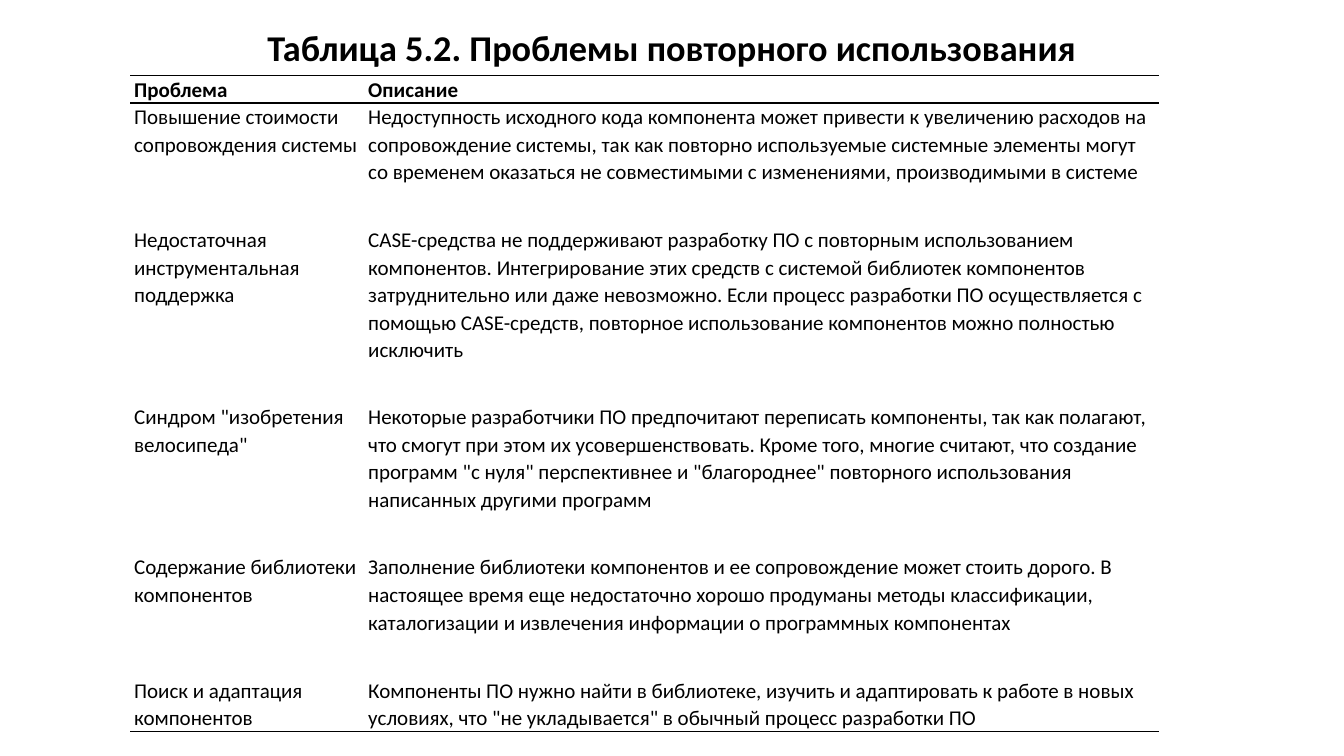
from lxml import etree
from pptx import Presentation
from pptx import util as u
from pptx.dml.color import RGBColor
from pptx.enum import text
from pptx.oxml import ns

TITLE = "Таблица 5.2. Проблемы повторного использования"
HEADINGS = ("Проблема", "Описание")
PROBLEMS = [
    ("Повышение стоимости сопровождения системы",
     "Недоступность исходного кода компонента может привести к увеличению расходов на "
     "сопровождение системы, так как повторно используемые системные элементы могут со "
     "временем оказаться не совместимыми с изменениями, производимыми в системе"),
    ("Недостаточная инструментальная поддержка",
     "CASE-средства не поддерживают разработку ПО с повторным использованием компонентов. "
     "Интегрирование этих средств с системой библиотек компонентов затруднительно или даже "
     "невозможно. Если процесс разработки ПО осуществляется с помощью CASE-средств, "
     "повторное использование компонентов можно полностью исключить"),
    ('Синдром "изобретения велосипеда"',
     "Некоторые разработчики ПО предпочитают переписать компоненты, так как полагают, что "
     "смогут при этом их усовершенствовать. Кроме того, многие считают, что создание "
     'программ "с нуля" перспективнее и "благороднее" повторного использования написанных '
     "другими программ"),
    ("Содержание библиотеки компонентов",
     "Заполнение библиотеки компонентов и ее сопровождение может стоить дорого. В настоящее "
     "время еще недостаточно хорошо продуманы методы классификации, каталогизации и "
     "извлечения информации о программных компонентах"),
    ("Поиск и адаптация компонентов",
     "Компоненты ПО нужно найти в библиотеке, изучить и адаптировать к работе в новых "
     'условиях, что "не укладывается" в обычный процесс разработки ПО'),
]

FONT, BLACK, WHITE = "Calibri", "000000", "FFFFFF"
LEFT, HEADER_TOP, HEADER_HEIGHT = 3.28, 1.9, 0.69
COLUMN_WIDTHS = (5.9, 20.03)
ROW_HEIGHTS = (3.1, 4.47, 3.78, 3.1, 1.37)
NO_STYLE_NO_GRID = "{2D5ABB26-0587-4C30-8999-92F81FD0307C}"


def color(value):
    return RGBColor.from_string(value)


def add_text(para, words, size, bold):
    span = para.add_run()
    span.text = words
    span.font.name, span.font.size, span.font.bold = FONT, u.Pt(size), bold
    span.font.color.rgb = color(BLACK)


def add_border(cell, side):
    """Draw a 1 pt black line on one side of a cell: lnT or lnB."""
    properties = cell._tc.get_or_add_tcPr()
    line = etree.SubElement(properties, ns.qn("a:" + side), w=str(u.Pt(1)))
    fill = etree.SubElement(line, ns.qn("a:solidFill"))
    etree.SubElement(fill, ns.qn("a:srgbClr"), val=BLACK)


def add_ruled_table(slide, top, rows, heights, bold=False):
    """Add a plain table with a line above its first row and below its last."""
    frame = slide.shapes.add_table(
        len(rows), len(COLUMN_WIDTHS), u.Cm(LEFT), u.Cm(top),
        u.Cm(sum(COLUMN_WIDTHS)), u.Cm(sum(heights)))
    table = frame.table
    table.first_row = table.horz_banding = False
    table._tbl.tblPr.find(ns.qn("a:tableStyleId")).text = NO_STYLE_NO_GRID
    for column, width in zip(table.columns, COLUMN_WIDTHS):
        column.width = u.Cm(width)
    for r, (row, height) in enumerate(zip(rows, heights)):
        table.rows[r].height = u.Cm(height)
        for c, words in enumerate(row):
            cell = table.cell(r, c)
            cell.margin_left = cell.margin_right = u.Cm(0.1)
            cell.margin_top = cell.margin_bottom = 0
            if r == 0:
                add_border(cell, "lnT")
            if r == len(rows) - 1:
                add_border(cell, "lnB")
            cell.fill.solid()
            cell.fill.fore_color.rgb = color(WHITE)
            para = cell.text_frame.paragraphs[0]
            para.line_spacing, para.space_after = 1.07, u.Pt(8)
            add_text(para, words, 15, bold)


deck = Presentation()
deck.slide_width, deck.slide_height = u.Cm(33.87), u.Cm(19.05)
slide = deck.slides.add_slide(deck.slide_layouts.get_by_name("Title Only"))

title = slide.shapes.title
title.left, title.top, title.width, title.height = map(u.Cm, (2.33, 0.71, 29.21, 1.19))
box = title.text_frame
box.auto_size = text.MSO_AUTO_SIZE.NONE
box.vertical_anchor = text.MSO_ANCHOR.TOP
heading = box.paragraphs[0]
heading.alignment = text.PP_ALIGN.CENTER
heading.line_spacing = 0.8
add_text(heading, TITLE, 25.9, True)

add_ruled_table(slide, HEADER_TOP + HEADER_HEIGHT, PROBLEMS, ROW_HEIGHTS)
add_ruled_table(slide, HEADER_TOP, [HEADINGS], [HEADER_HEIGHT], bold=True)

deck.save("out.pptx")
